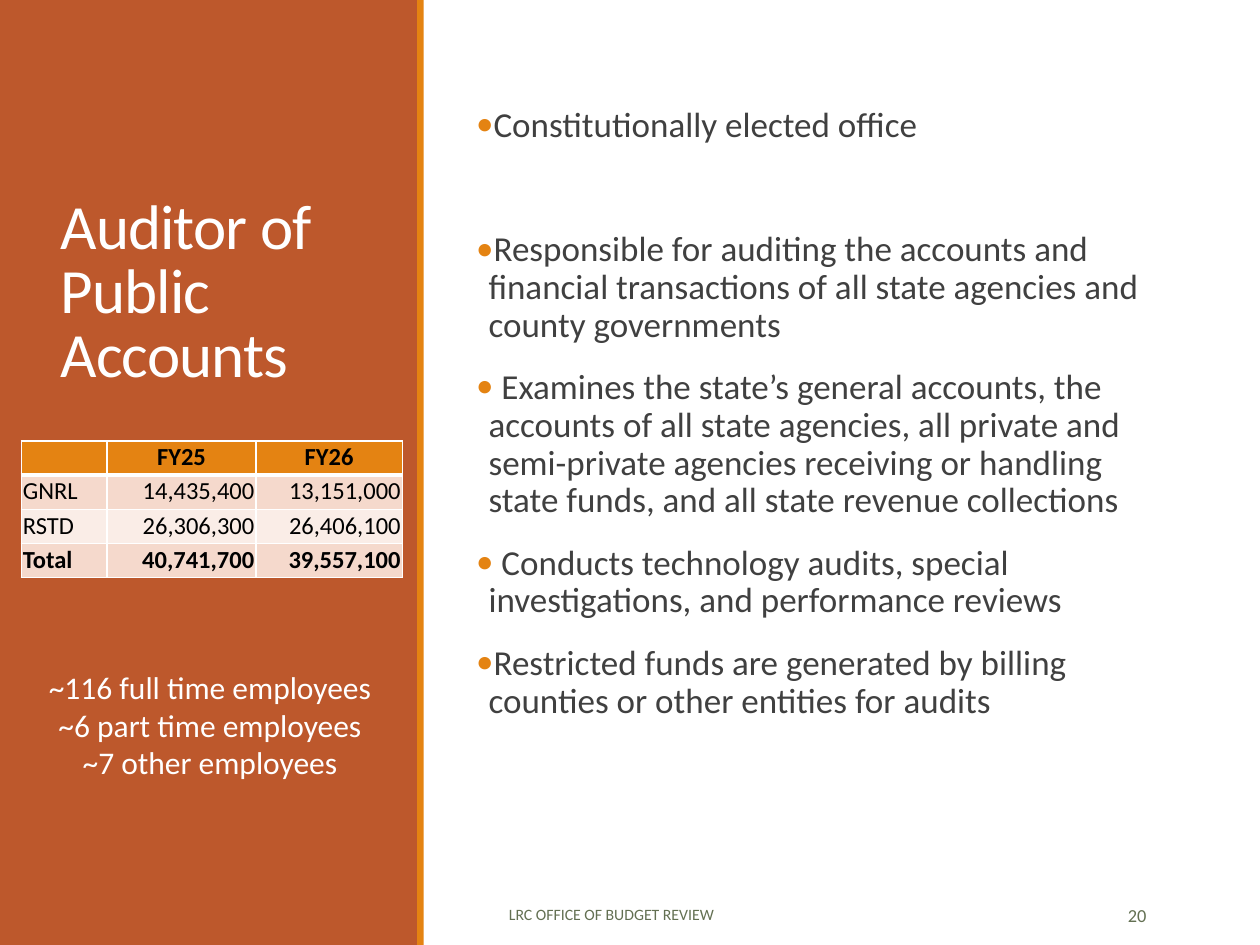
from pptx import Presentation
from pptx.util import Cm, Pt
from pptx.dml.color import RGBColor
from pptx.enum.shapes import MSO_SHAPE
from pptx.enum.text import MSO_ANCHOR, PP_ALIGN
from pptx.oxml.ns import qn
from lxml.etree import SubElement

FONT = "Calibri"
COLORS = {
    "panel": "BD582C", "accent": "E48312", "white": "FFFFFF", "black": "000000",
    "body": "404040", "footer": "637052", "band_dark": "F5D9CC", "band_light": "FAEDE7",
}

# Content
TITLE = "Auditor of Public Accounts"
BULLETS = [  # text, space before in points
    ("Constitutionally elected office", 0),
    ("Responsible for auditing the accounts and financial transactions of all state "
     "agencies and county governments", 47.5),
    (" Examines the state’s general accounts, the accounts of all state agencies, all "
     "private and semi-private agencies receiving or handling state funds, and all "
     "state revenue collections", 12),
    (" Conducts technology audits, special investigations, and performance reviews", 12),
    ("Restricted funds are generated by billing counties or other entities for audits", 12),
]
BUDGET = [
    ("", "FY25", "FY26"),
    ("GNRL", "14,435,400", "13,151,000"),
    ("RSTD", "26,306,300", "26,406,100"),
    ("Total", "40,741,700", "39,557,100"),
]
STAFF = ["~116 full time employees", "~6 part time employees", "~7 other employees"]
FOOTER = "LRC OFFICE OF BUDGET REVIEW"
PAGE = "20"

COL_WIDTHS = (1.73, 3.0, 2.95)
ROW_HEIGHT = 0.69


def rgb(name):
    return RGBColor.from_string(COLORS[name])


def add_bar(s, left, width, color):
    bar = s.shapes.add_shape(MSO_SHAPE.RECTANGLE, Cm(left), 0, Cm(width), Cm(19.05))
    bar.shadow.inherit = False
    bar.fill.solid()
    bar.fill.fore_color.rgb = rgb(color)
    bar.line.fill.background()


def add_box(s, left, top, width, height, anchor=MSO_ANCHOR.TOP):
    tf = s.shapes.add_textbox(Cm(left), Cm(top), Cm(width), Cm(height)).text_frame
    tf.word_wrap = True
    tf.vertical_anchor = anchor
    return tf


def next_paragraph(tf, i):
    return tf.add_paragraph() if i else tf.paragraphs[0]


def add_text(p, text, size, color, align=PP_ALIGN.LEFT, bold=False):
    p.alignment = align
    r = p.add_run()
    r.text = text
    r.font.name, r.font.size, r.font.bold = FONT, Pt(size), bold
    r.font.color.rgb = rgb(color)
    return r


def add_bullet(p):
    pPr = p._p.get_or_add_pPr()
    pPr.set("marL", str(Cm(0.25)))
    pPr.set("indent", str(-Cm(0.25)))
    clr = SubElement(pPr, qn("a:buClr"))
    SubElement(clr, qn("a:srgbClr"), val=COLORS["accent"])
    SubElement(pPr, qn("a:buFont"), typeface=FONT)
    SubElement(pPr, qn("a:buChar"), char="•")


def add_borders(cell, bottom):
    tcPr = cell._tc.get_or_add_tcPr()
    for side, width in (("L", 1), ("R", 1), ("T", 1), ("B", bottom)):
        ln = SubElement(tcPr, qn(f"a:ln{side}"), w=str(Pt(width)))
        fill = SubElement(ln, qn("a:solidFill"))
        SubElement(fill, qn("a:srgbClr"), val=COLORS["white"])


def add_budget_table(s):
    table = s.shapes.add_table(
        len(BUDGET), len(COL_WIDTHS), Cm(0.43), Cm(8.89),
        Cm(sum(COL_WIDTHS)), Cm(ROW_HEIGHT * len(BUDGET))).table
    for col, width in zip(table.columns, COL_WIDTHS):
        col.width = Cm(width)
    for i, values in enumerate(BUDGET):
        table.rows[i].height = Cm(ROW_HEIGHT)
        header, total = i == 0, i == len(BUDGET) - 1
        for j, value in enumerate(values):
            cell = table.cell(i, j)
            cell.margin_left = cell.margin_right = cell.margin_top = Cm(0.03)
            cell.margin_bottom = 0
            add_borders(cell, 3 if header else 1)
            cell.fill.solid()
            cell.fill.fore_color.rgb = rgb(
                "accent" if header else "band_dark" if i % 2 else "band_light")
            p = cell.text_frame.paragraphs[0]
            if value:
                align = (PP_ALIGN.CENTER if header
                         else PP_ALIGN.RIGHT if j else PP_ALIGN.LEFT)
                add_text(p, value, 14, "black", align, header or total)
            else:
                SubElement(p._p, qn("a:endParaRPr"), sz="1400")


def main():
    prs = Presentation()
    prs.slide_width, prs.slide_height = Cm(25.4), Cm(19.05)
    s = prs.slides.add_slide(prs.slide_layouts[6])

    # Side panel
    add_bar(s, 0, 8.43, "panel")
    add_bar(s, 8.41, 0.13, "accent")

    # Title
    p = add_box(s, 0.97, 1.65, 6.65, 6.35, MSO_ANCHOR.BOTTOM).paragraphs[0]
    p.line_spacing = 0.85
    r = add_text(p, TITLE, 36, "white")
    r._r.get_or_add_rPr().set("spc", "-50")

    # Bullets
    tf = add_box(s, 9.6, 2.03, 13.92, 14.6)
    tf.margin_left = tf.margin_right = 0
    for i, (text, before) in enumerate(BULLETS):
        p = next_paragraph(tf, i)
        add_bullet(p)
        p.line_spacing = 0.9
        p.space_before, p.space_after = Pt(before), Pt(2)
        add_text(p, text, 20, "body")

    # Footer and page number
    tf = add_box(s, 10.01, 17.93, 9.68, 1.02, MSO_ANCHOR.MIDDLE)
    add_text(tf.paragraphs[0], FOOTER, 9, "footer")
    tf = add_box(s, 20.62, 17.93, 2.74, 1.02, MSO_ANCHOR.MIDDLE)
    add_text(tf.paragraphs[0], PAGE, 10.5, "footer", PP_ALIGN.RIGHT)

    # Budget and staffing
    add_budget_table(s)
    tf = add_box(s, 0.64, 13.34, 7.19, 2.57)
    for i, line in enumerate(STAFF):
        add_text(next_paragraph(tf, i), line, 18, "white", PP_ALIGN.CENTER)

    prs.save("out.pptx")


if __name__ == "__main__":
    main()
